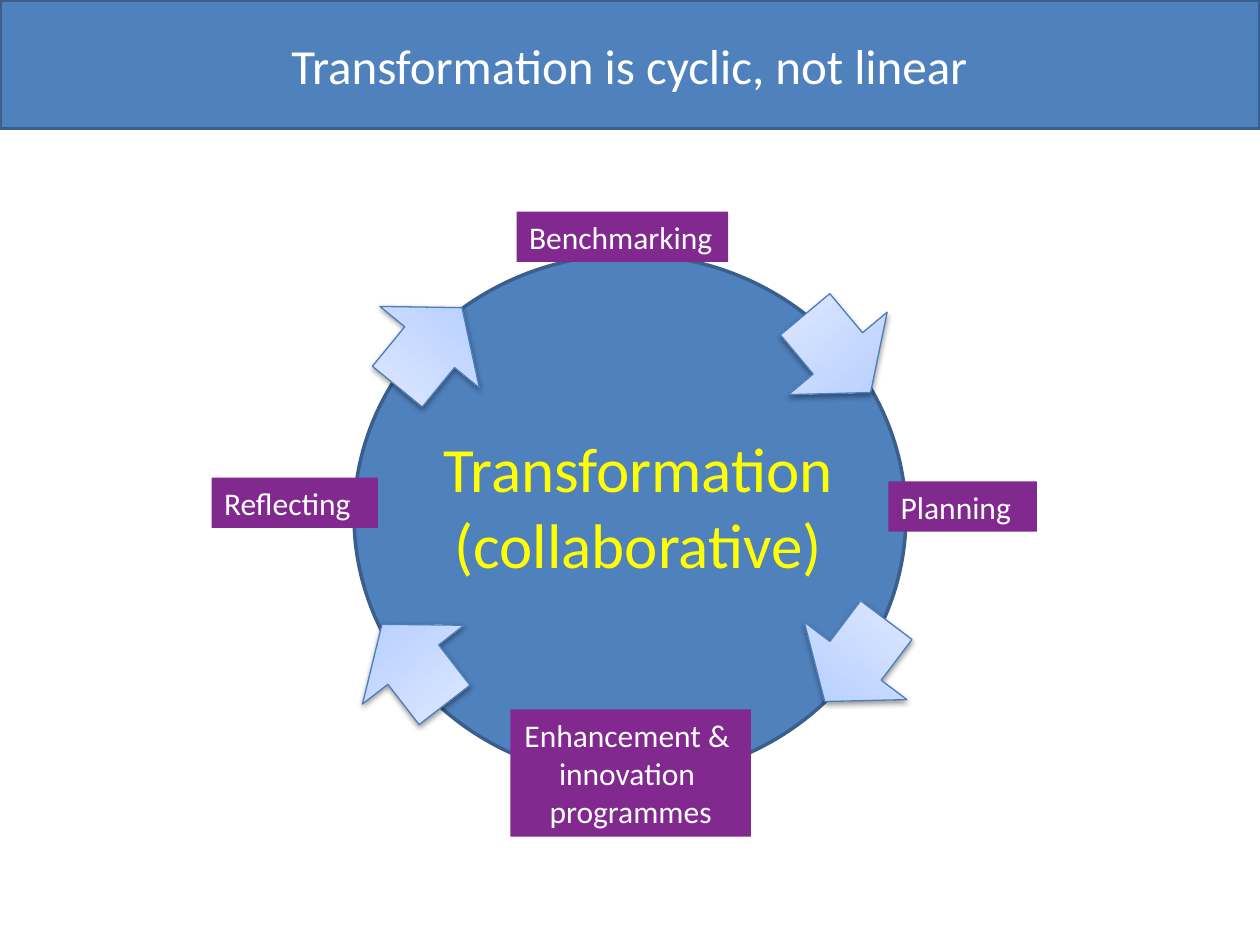
"""Build a slide showing transformation as a four-stage collaborative cycle."""
from dataclasses import dataclass

from pptx import Presentation
from pptx.dml.color import RGBColor
from pptx.enum.shapes import MSO_SHAPE
from pptx.enum.text import MSO_ANCHOR, PP_ALIGN
from pptx.oxml import parse_xml
from pptx.oxml.ns import nsdecls
from pptx.util import Inches, Pt

RECTANGLE, OVAL, DOWN_ARROW = MSO_SHAPE.RECTANGLE, MSO_SHAPE.OVAL, MSO_SHAPE.DOWN_ARROW
LEFT, CENTER = PP_ALIGN.LEFT, PP_ALIGN.CENTER
TOP, MIDDLE = MSO_ANCHOR.TOP, MSO_ANCHOR.MIDDLE

FONT = "Calibri"
BLUE, NAVY, ARROW_EDGE = "4F81BD", "3A5F8C", "4B7EBC"
PURPLE, WHITE, YELLOW = "81298F", "FFFFFF", "FFFF00"
ARROW_STOPS = ((0, "A4C4FF"), (35, "BFD4FF"), (100, "E6EEFF"))
ARROW_WIDTH, ARROW_HEIGHT = 1.02, 0.81


@dataclass(frozen=True)
class Box:
    left: float
    top: float
    width: float
    height: float

    def emu(self) -> tuple:
        return tuple(Inches(v) for v in (self.left, self.top, self.width, self.height))


@dataclass(frozen=True)
class Stage:
    box: Box
    lines: tuple
    align: PP_ALIGN = LEFT


@dataclass(frozen=True)
class Arrow:
    left: float
    top: float
    rotation: float


STAGES = (
    Stage(Box(4.1, 1.68, 1.68, 0.4), ("Benchmarking",)),
    Stage(Box(7.05, 3.82, 1.18, 0.4), ("Planning",)),
    Stage(Box(4.05, 5.63, 1.91, 1.01), ("Enhancement & ", "innovation ", "programmes"), CENTER),
    Stage(Box(1.68, 3.79, 1.32, 0.4), ("Reflecting",)),
)
ARROWS = (
    Arrow(6.14, 2.4, 320.1),
    Arrow(6.28, 4.84, 37.1),
    Arrow(2.9, 2.35, 219.3),
    Arrow(2.77, 4.87, 142.2),
)


def color(value: str) -> RGBColor:
    return RGBColor.from_string(value)


def write(frame, lines: tuple, size: float, text_color: str, align, anchor) -> None:
    frame.word_wrap = True
    frame.vertical_anchor = anchor
    for index, line in enumerate(lines):
        paragraph = frame.add_paragraph() if index else frame.paragraphs[0]
        paragraph.alignment = align
        run = paragraph.add_run()
        run.text = line
        run.font.name = FONT
        run.font.size = Pt(size)
        run.font.color.rgb = color(text_color)


def add_outlined(slide, preset, box: Box, edge: str, edge_width: float):
    shape = slide.shapes.add_shape(preset, *box.emu())
    shape.shadow.inherit = False
    shape.fill.solid()
    shape.fill.fore_color.rgb = color(BLUE)
    shape.line.color.rgb = color(edge)
    shape.line.width = Pt(edge_width)
    return shape


def add_text(slide, box: Box, lines: tuple, size: float, text_color: str, align, anchor):
    text = slide.shapes.add_textbox(*box.emu())
    write(text.text_frame, lines, size, text_color, align, anchor)
    return text


def add_stage(slide, stage: Stage) -> None:
    label = add_text(slide, stage.box, stage.lines, 18, WHITE, stage.align, MIDDLE)
    label.fill.solid()
    label.fill.fore_color.rgb = color(PURPLE)


def add_arrow(slide, arrow: Arrow) -> None:
    box = Box(arrow.left, arrow.top, ARROW_WIDTH, ARROW_HEIGHT)
    shape = add_outlined(slide, DOWN_ARROW, box, ARROW_EDGE, 0.75)
    shape.rotation = arrow.rotation
    stops = "".join(
        f'<a:gs pos="{position * 1000}"><a:srgbClr val="{value}"/></a:gs>'
        for position, value in ARROW_STOPS
    )
    properties = shape.element.spPr
    properties.replace(
        properties.find("{*}solidFill"),
        parse_xml(
            f'<a:gradFill {nsdecls("a")} rotWithShape="1"><a:gsLst>{stops}</a:gsLst>'
            '<a:lin ang="16200000" scaled="1"/></a:gradFill>'
        ),
    )
    properties.find("{*}effectLst").append(
        parse_xml(
            f'<a:outerShdw {nsdecls("a")} blurRad="40000" dist="20000" dir="5400000" '
            'rotWithShape="0"><a:srgbClr val="000000"><a:alpha val="38000"/>'
            "</a:srgbClr></a:outerShdw>"
        )
    )


def main() -> None:
    deck = Presentation()
    deck.slide_width, deck.slide_height = Inches(10), Inches(7.5)
    slide = deck.slides.add_slide(deck.slide_layouts[5])

    banner = add_outlined(slide, RECTANGLE, Box(0, 0, 10, 1.02), NAVY, 2)
    title = slide.shapes.title
    title.left, title.top, title.width, title.height = Box(0.23, 0.08, 9.53, 0.87).emu()
    heading = ("Transformation is cyclic, not linear",)
    write(title.text_frame, heading, 28, WHITE, CENTER, MIDDLE)
    banner.element.addnext(title.element)

    add_outlined(slide, OVAL, Box(2.81, 2.02, 4.38, 4.16), NAVY, 2)
    for stage in STAGES:
        add_stage(slide, stage)
    for arrow in ARROWS:
        add_arrow(slide, arrow)
    core = ("Transformation", "(collaborative)")
    add_text(slide, Box(3.36, 3.36, 3.41, 1.92), core, 36, YELLOW, CENTER, TOP)

    deck.save("out.pptx")


if __name__ == "__main__":
    main()
